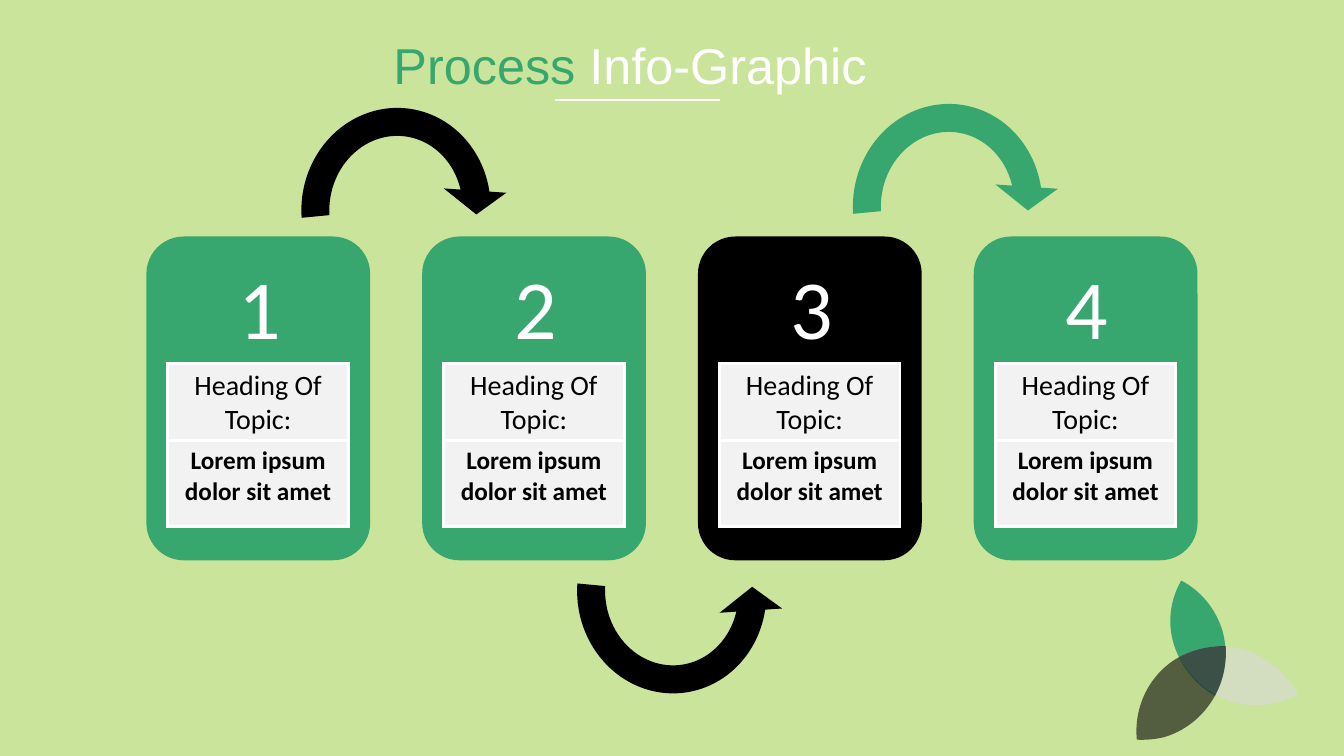
from dataclasses import dataclass

from lxml import etree
from pptx import Presentation
from pptx.dml.color import RGBColor
from pptx.dml.fill import FillFormat
from pptx.enum.shapes import MSO_CONNECTOR, MSO_SHAPE
from pptx.enum.text import MSO_AUTO_SIZE, PP_ALIGN
from pptx.oxml.ns import qn
from pptx.shapes.autoshape import Shape
from pptx.slide import Slide
from pptx.text.text import TextFrame
from pptx.util import Cm, Pt

RECTANGLE = MSO_SHAPE.RECTANGLE
ROUNDED = MSO_SHAPE.ROUNDED_RECTANGLE
CIRCULAR_ARROW = MSO_SHAPE.CIRCULAR_ARROW
STRAIGHT = MSO_CONNECTOR.STRAIGHT
GROW = MSO_AUTO_SIZE.SHAPE_TO_FIT_TEXT
CENTER = PP_ALIGN.CENTER
LEFT = PP_ALIGN.LEFT


@dataclass(frozen=True)
class Theme:
    backdrop: str = "99CB38"
    green: str = "37A76F"
    black: str = "000000"
    white: str = "FFFFFF"
    gray: str = "D9D9D9"
    cell: str = "F2F2F2"
    title_font: str = "Arial"
    body_font: str = "Calibri"
    title_size: int = 36
    number_size: int = 60
    heading_size: int = 20
    detail_size: int = 18
    border_width: float = 2.25
    rule_width: float = 1.5


@dataclass(frozen=True)
class Step:
    number: str
    color: str
    heading: str = "Heading Of Topic:"
    detail: str = "Lorem ipsum dolor sit amet"


@dataclass(frozen=True)
class Arrow:
    top: float
    color: str
    below: bool = False


@dataclass(frozen=True)
class Leaf:
    color: str
    opacity: int
    outline: tuple[tuple[float, float], ...]


THEME = Theme()
PAGE_WIDTH, PAGE_HEIGHT = Cm(33.87), Cm(19.05)
PITCH = 6.95

STEPS = (
    Step("1", THEME.green),
    Step("2", THEME.green),
    Step("3", THEME.black),
    Step("4", THEME.green),
)
ARROWS = (
    Arrow(2.28, THEME.black),
    Arrow(11.94, THEME.black, below=True),
    Arrow(2.18, THEME.green),
)
LEAVES = (
    Leaf(THEME.green, 100, (
        (29.77, 14.63), (30.25, 14.88), (30.63, 15.32), (30.81, 15.9),
        (30.96, 16.46), (30.89, 17.04), (30.63, 17.53),
        (30.15, 17.27), (29.77, 16.81), (29.59, 16.26),
        (29.41, 15.7), (29.49, 15.11), (29.77, 14.63),
    )),
    Leaf(THEME.gray, 59, (
        (30.15, 16.38), (31.14, 16.08), (32.18, 16.54), (32.72, 17.5),
        (32.57, 17.57), (32.41, 17.63), (32.26, 17.68),
        (31.27, 17.98), (30.23, 17.53), (29.72, 16.56),
        (29.85, 16.48), (30, 16.42), (30.15, 16.38),
    )),
    Leaf(THEME.black, 59, (
        (30.15, 16.38), (30.38, 16.31), (30.63, 16.28), (30.89, 16.28),
        (30.96, 17.3), (30.35, 18.26), (29.36, 18.57),
        (29.13, 18.63), (28.89, 18.65), (28.65, 18.64),
        (28.55, 17.63), (29.16, 16.66), (30.15, 16.38),
    )),
)


def paint(fill: FillFormat, color: str) -> None:
    fill.solid()
    fill.fore_color.rgb = RGBColor.from_string(color)


def style_shape(shape: Shape, color: str, opacity: int = 100) -> None:
    shape.shadow.inherit = False
    paint(shape.fill, color)
    shape.line.fill.background()
    if opacity < 100:
        tint = shape.element.spPr.find(qn("a:solidFill")).find(qn("a:srgbClr"))
        etree.SubElement(tint, qn("a:alpha"), val=str(opacity * 1000))


def write_text(frame: TextFrame, text: str, *, size: int, color: str,
               font: str = THEME.body_font, bold: bool = False,
               align: PP_ALIGN = CENTER) -> None:
    frame.word_wrap = True
    para = frame.paragraphs[0]
    para.alignment = align
    span = para.add_run()
    span.text = text
    span.font.size = Pt(size)
    span.font.name = font
    span.font.bold = bold
    span.font.color.rgb = RGBColor.from_string(color)


def add_text_frame(page: Slide, left: float, top: float,
                   width: float, height: float) -> TextFrame:
    box = page.shapes.add_textbox(Cm(left), Cm(top), Cm(width), Cm(height))
    box.text_frame.auto_size = GROW
    return box.text_frame


def add_title(page: Slide) -> None:
    frame = add_text_frame(page, 8.54, 0.74, 14.68, 1.8)
    for text, color in (("Process ", THEME.green), ("Info-Graphic", THEME.white)):
        write_text(frame, text, size=THEME.title_size, color=color,
                   font=THEME.title_font)
    rule = page.shapes.add_connector(STRAIGHT, Cm(13.99), Cm(2.51), Cm(18.14), Cm(2.51))
    rule.line.color.rgb = RGBColor.from_string(THEME.white)
    rule.line.width = Pt(THEME.rule_width)
    etree.SubElement(rule.element.spPr, qn("a:effectLst"))


def add_card(page: Slide, step: Step, offset: float) -> None:
    card = page.shapes.add_shape(ROUNDED, Cm(3.69 + offset), Cm(5.96), Cm(5.64), Cm(8.16))
    style_shape(card, step.color)
    frame = add_text_frame(page, 5.76 + offset, 6.32, 1.5, 2.82)
    write_text(frame, step.number, size=THEME.number_size, color=THEME.white, align=LEFT)


def add_topic(page: Slide, step: Step, offset: float) -> None:
    table = page.shapes.add_table(2, 1, Cm(4.23 + offset), Cm(9.16),
                                  Cm(4.55), Cm(4.09)).table
    table.first_row = False
    table.horz_banding = False
    rows = (
        (step.heading, THEME.heading_size, False, 1.93),
        (step.detail, THEME.detail_size, True, 2.16),
    )
    for index, (text, size, bold, height) in enumerate(rows):
        table.rows[index].height = Cm(height)
        cell = table.cell(index, 0)
        properties = cell._tc.get_or_add_tcPr()
        for side in ("a:lnL", "a:lnR", "a:lnT", "a:lnB"):
            border = etree.SubElement(properties, qn(side), w=str(Pt(THEME.border_width)))
            solid = etree.SubElement(border, qn("a:solidFill"))
            etree.SubElement(solid, qn("a:srgbClr"), val=THEME.white)
        paint(cell.fill, THEME.cell)
        write_text(cell.text_frame, text, size=size, color=THEME.black, bold=bold)


def add_arrow(page: Slide, arrow: Arrow, offset: float) -> None:
    shape = page.shapes.add_shape(CIRCULAR_ARROW, Cm(7.16 + offset), Cm(arrow.top),
                                  Cm(5.64), Cm(5.97))
    style_shape(shape, arrow.color)
    for index, value in ((1, 10.19), (3, 101.19), (4, 0.14)):
        shape.adjustments[index] = value
    shape.rotation = 354 if arrow.below else 6
    if arrow.below:
        shape.element.spPr.xfrm.set("flipV", "1")


def curve_segments(shape: Shape) -> None:
    outline = shape.element.spPr.find(".//" + qn("a:path"))
    lines = outline.findall(qn("a:lnTo"))
    for first in range(0, len(lines), 3):
        curve = etree.Element(qn("a:cubicBezTo"))
        lines[first].addprevious(curve)
        for line in lines[first:first + 3]:
            curve.append(line[0])
            outline.remove(line)


def add_leaves(page: Slide) -> None:
    group = page.shapes.add_group_shape()
    for leaf in LEAVES:
        start, *controls = [(Cm(x), Cm(y)) for x, y in leaf.outline]
        builder = group.shapes.build_freeform(*start)
        builder.add_line_segments(controls, close=True)
        shape = builder.convert_to_shape()
        curve_segments(shape)
        style_shape(shape, leaf.color, leaf.opacity)


def main() -> None:
    deck = Presentation()
    deck.slide_width, deck.slide_height = PAGE_WIDTH, PAGE_HEIGHT
    page = deck.slides.add_slide(deck.slide_layouts[6])
    backdrop = page.shapes.add_shape(RECTANGLE, 0, 0, PAGE_WIDTH, PAGE_HEIGHT)
    style_shape(backdrop, THEME.backdrop, 50)
    for index, step in enumerate(STEPS):
        add_card(page, step, index * PITCH)
    for index, arrow in enumerate(ARROWS):
        add_arrow(page, arrow, index * PITCH)
    add_title(page)
    for index, step in enumerate(STEPS):
        add_topic(page, step, index * PITCH)
    add_leaves(page)
    deck.save("out.pptx")


if __name__ == "__main__":
    main()
